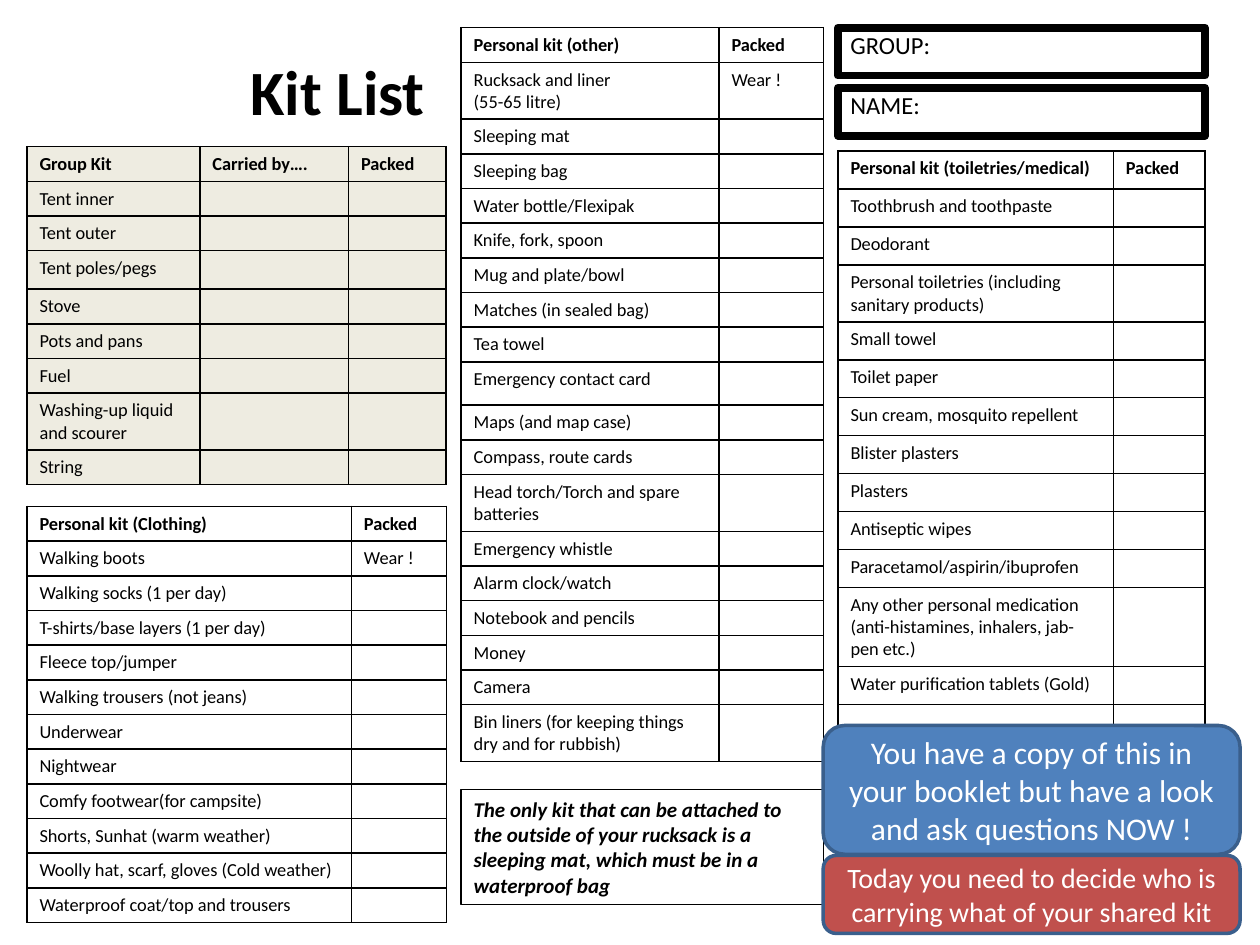
from lxml.etree import SubElement
from pptx import Presentation
from pptx.dml.color import RGBColor
from pptx.enum.shapes import MSO_SHAPE as Kind
from pptx.enum.text import MSO_ANCHOR as Anchor, PP_ALIGN as Align
from pptx.oxml import parse_xml
from pptx.oxml.ns import nsdecls, qn
from pptx.util import Pt

HUES = {"ink": "000000", "paper": "FFFFFF", "sand": "EEECE1",
        "blue": "4F81BD", "red": "C0504D", "edge": "3A5F8C"}
ROW, PAIR = 19.83, 32.4

GROUP = """Group Kit|Carried by….|Packed
Tent inner
Tent outer
Tent poles/pegs
Stove
Pots and pans
Fuel
Washing-up liquid and scourer
String""".split("\n")

CLOTHES = """Personal kit (Clothing)|Packed
Walking boots|Wear !
Walking socks (1 per day)
T-shirts/base layers (1 per day)
Fleece top/jumper
Walking trousers (not jeans)
Underwear
Nightwear
Comfy footwear(for campsite)
Shorts, Sunhat (warm weather)
Woolly hat, scarf, gloves (Cold weather)
Waterproof coat/top and trousers""".split("\n")

OTHER = ["Personal kit (other)|Packed",
         "Rucksack and liner\n(55-65 litre)|Wear !"] + """Sleeping mat
Sleeping bag
Water bottle/Flexipak
Knife, fork, spoon
Mug and plate/bowl
Matches (in sealed bag)
Tea towel
Emergency contact card
Maps (and map case)
Compass, route cards
Head torch/Torch and spare batteries
Emergency whistle
Alarm clock/watch
Notebook and pencils
Money
Camera
Bin liners (for keeping things dry and for rubbish)""".split("\n")

WASH = """Personal kit (toiletries/medical)|Packed
Toothbrush and toothpaste
Deodorant
Personal toiletries (including sanitary products)
Small towel
Toilet paper
Sun cream, mosquito repellent
Blister plasters
Plasters
Antiseptic wipes
Paracetamol/aspirin/ibuprofen
Any other personal medication (anti-histamines, inhalers, jab-pen etc.)
Water purification tablets (Gold)""".split("\n") + [""] * 5


def hue(name):
    """Return the named colour."""
    return RGBColor.from_string(HUES[name])


def style(frame, size, tint="ink", bold=False, slant=False, align=Align.LEFT):
    """Format every run of a text frame."""
    for para in frame.paragraphs:
        para.alignment = align
        for run in para.runs:
            font = run.font
            font.name, font.size = "Calibri", Pt(size)
            font.bold, font.italic = bold, slant
            font.color.rgb = hue(tint)


def fill_cell(cell, text, head, tint):
    """Write one cell with its fill and black borders."""
    cell.text_frame.text = text
    cell.margin_bottom = Pt(3.4)
    style(cell.text_frame, 10.5, bold=head)
    if not text:
        SubElement(cell.text_frame.paragraphs[0]._p, qn("a:endParaRPr"), sz="1050")
    if tint:
        cell.fill.solid()
        cell.fill.fore_color.rgb = hue(tint)
    else:
        cell.fill.background()
    props = cell._tc.get_or_add_tcPr()
    for spot, side in enumerate("LRTB"):
        props.insert(spot, parse_xml(
            f'<a:ln{side} w="12700" {nsdecls("a")}><a:solidFill>'
            f'<a:srgbClr val="{HUES["ink"]}"/></a:solidFill></a:ln{side}>'))


def add_list(slide, left, top, cols, lines, row=ROW, tall=None, tint=None):
    """Add a kit table; tall maps row numbers to special heights."""
    highs = [(tall or {}).get(num, row) for num in range(len(lines))]
    table = slide.shapes.add_table(
        len(lines), len(cols), Pt(left), Pt(top), Pt(sum(cols)), Pt(sum(highs))).table
    table.first_row = table.horz_banding = False
    for col, width in zip(table.columns, cols):
        col.width = Pt(width)
    for num, line in enumerate(lines):
        table.rows[num].height = Pt(highs[num])
        texts = line.split("|")
        texts += [""] * (len(cols) - len(texts))
        for col, text in enumerate(texts):
            fill_cell(table.cell(num, col), text, num == 0, tint)


def add_box(slide, kind, box, text, size, edge, width, fill=None, **looks):
    """Add an outlined shape with text and return its frame."""
    shape = slide.shapes.add_shape(kind, *map(Pt, box))
    shape.shadow.inherit = False
    shape.line.color.rgb, shape.line.width = hue(edge), Pt(width)
    if fill:
        shape.fill.solid()
        shape.fill.fore_color.rgb = hue(fill)
    else:
        shape.fill.background()
    frame = shape.text_frame
    frame.word_wrap, frame.vertical_anchor = True, Anchor.MIDDLE
    frame.text = text
    style(frame, size, **looks)
    return frame


def add_title(slide, left, top, width, height):
    """Place the slide title in its box."""
    title = slide.shapes.title
    title.left, title.top, title.width, title.height = map(Pt, (left, top, width, height))
    frame = title.text_frame
    frame.text, frame.word_wrap = "Kit List", False
    frame.vertical_anchor = Anchor.MIDDLE
    style(frame, 36, bold=True, align=Align.CENTER)


def add_names(slide, left, top, width):
    """Add the two boxes to be filled in by hand."""
    for num, text in enumerate(("GROUP:", "NAME:")):
        box = (left, top + num * 34.3, width, 27.4)
        frame = add_box(slide, Kind.RECTANGLE, box, text, 14, "ink", 4.5)
        frame.margin_top, frame.margin_bottom = Pt(0), Pt(8.4)


def add_calls(slide, left, top, width):
    """Add the two rounded reminders, one above the other."""
    calls = (("You have a copy of this in your booklet but have a look and ask questions NOW !",
              18, "blue", 0, 73.6),
             ("Today you need to decide who is carrying what of your shared kit",
              16, "red", 74.2, 44.6))
    for text, size, fill, drop, height in calls:
        add_box(slide, Kind.ROUNDED_RECTANGLE, (left, top + drop, width, height), text,
                size, "edge", 2, fill, tint="paper", align=Align.CENTER)


def main():
    """Build the kit list slide."""
    deck = Presentation()
    deck.slide_width, deck.slide_height = Pt(720), Pt(540)
    slide = deck.slides.add_slide(deck.slide_layouts[5])
    add_names(slide, 478.8, 15.8, 209.8)
    add_title(slide, 135.4, 26, 115.2, 51)
    add_list(slide, 15.4, 83.8, (98.8, 85, 55.6), GROUP,
             tall={3: 22, 7: PAIR}, tint="sand")
    add_list(slide, 478.8, 86.4, (157.4, 52.4), WASH, 21.7, {3: PAIR, 11: 45})
    add_list(slide, 263.5, 15.8, (147.4, 59.8), OTHER,
             tall={1: PAIR, 9: 24.8, 12: PAIR, 18: PAIR})
    add_list(slide, 15.4, 289.4, (185.4, 54.4), CLOTHES)
    add_box(slide, Kind.RECTANGLE, (263.5, 451.2, 207, 65.6),
            "The only kit that can be attached to the outside of your rucksack is a "
            "sleeping mat, which must be in a waterproof bag",
            12, "ink", 0.75, bold=True, slant=True)
    add_calls(slide, 470.4, 414.6, 238.2)
    deck.save("out.pptx")


if __name__ == "__main__":
    main()
